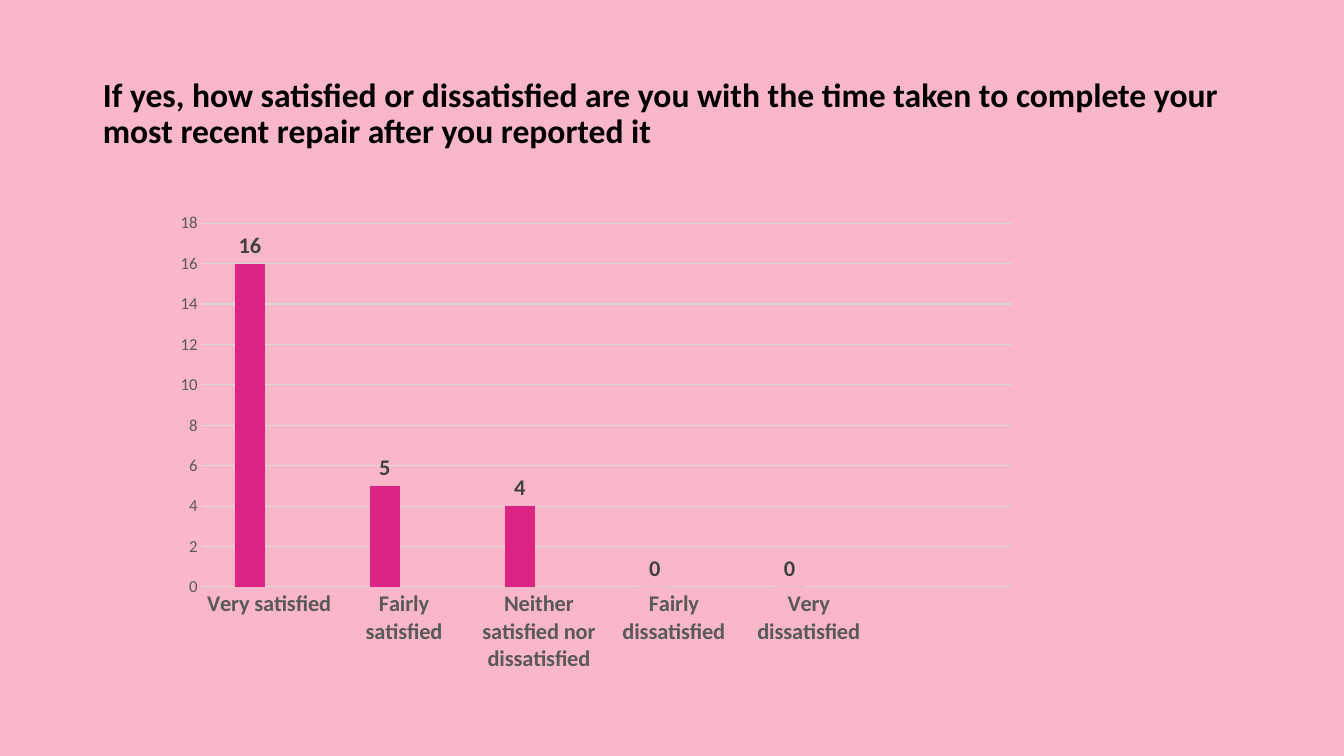
from pptx import Presentation
from pptx.chart.data import CategoryChartData
from pptx.dml.color import RGBColor
from pptx.enum.chart import XL_CHART_TYPE, XL_LABEL_POSITION, XL_TICK_MARK
from pptx.enum.text import MSO_ANCHOR, MSO_AUTO_SIZE, PP_ALIGN
from pptx.util import Inches, Pt

COLUMN_CLUSTERED = XL_CHART_TYPE.COLUMN_CLUSTERED
OUTSIDE_END = XL_LABEL_POSITION.OUTSIDE_END
NO_TICK = XL_TICK_MARK.NONE
BOTTOM = MSO_ANCHOR.BOTTOM
NO_AUTOFIT = MSO_AUTO_SIZE.NONE
LEFT = PP_ALIGN.LEFT

PINK = RGBColor(0xFA, 0xB7, 0xC9)
MAGENTA = RGBColor(0xDC, 0x24, 0x85)
BLACK = RGBColor(0x00, 0x00, 0x00)
DARK_GREY = RGBColor(0x40, 0x40, 0x40)
GREY = RGBColor(0x59, 0x59, 0x59)
LIGHT_GREY = RGBColor(0xD9, 0xD9, 0xD9)
FONT_NAME = "Calibri"
TITLE_ONLY_LAYOUT = 5

QUESTION = (
    "If yes, how satisfied or dissatisfied are you with the time taken "
    "to complete your most recent repair after you reported it"
)
ANSWERS = [
    "Very satisfied",
    "Fairly satisfied",
    "Neither satisfied nor dissatisfied",
    "Fairly dissatisfied",
    "Very dissatisfied",
    "",
]
SERIES = [
    ("Series 1", [16, 5, 4, 0, 0, None], MAGENTA, 16, True),
    ("Series 2", [None] * len(ANSWERS), PINK, 12, False),
]


def set_font(font, size, color, bold=False):
    font.name = FONT_NAME
    font.size = Pt(size)
    font.bold = bold
    font.color.rgb = color


def set_line(line):
    line.color.rgb = LIGHT_GREY
    line.width = Pt(0.75)


def add_question(slide, left, top, width, height):
    title = slide.shapes.title
    title.left, title.top, title.width, title.height = left, top, width, height
    frame = title.text_frame
    frame.text = QUESTION
    frame.word_wrap = True
    frame.auto_size = NO_AUTOFIT
    frame.vertical_anchor = BOTTOM
    paragraph = frame.paragraphs[0]
    paragraph.alignment = LEFT
    paragraph.line_spacing = 0.9
    set_font(paragraph.font, 24, BLACK, True)


def format_axes(chart):
    category_axis = chart.category_axis
    value_axis = chart.value_axis
    for axis in (category_axis, value_axis):
        axis.major_tick_mark = NO_TICK
        axis.minor_tick_mark = NO_TICK
    set_font(category_axis.tick_labels.font, 16, GREY, True)
    set_line(category_axis.format.line)
    set_font(value_axis.tick_labels.font, 12, GREY)
    value_axis.format.line.fill.background()
    value_axis.minimum_scale = 0
    value_axis.maximum_scale = 18
    value_axis.major_unit = 2
    value_axis.has_major_gridlines = True
    set_line(value_axis.major_gridlines.format.line)


def add_answer_chart(slide, left, top, width, height):
    chart_data = CategoryChartData()
    chart_data.categories = ANSWERS
    for name, values, *_ in SERIES:
        chart_data.add_series(name, values)
    chart = slide.shapes.add_chart(
        COLUMN_CLUSTERED, left, top, width, height, chart_data
    ).chart
    chart.has_title = False
    chart.has_legend = False
    set_font(chart.font, 10, BLACK)
    format_axes(chart)

    plot = chart.plots[0]
    plot.vary_by_categories = False
    plot.gap_width = 219
    plot.overlap = -27
    for series, (_, _, color, size, bold) in zip(plot.series, SERIES):
        series.format.fill.solid()
        series.format.fill.fore_color.rgb = color
        series.invert_if_negative = False
        labels = series.data_labels
        labels.show_value = True
        labels.position = OUTSIDE_END
        set_font(labels.font, size, DARK_GREY, bold)


def main():
    presentation = Presentation()
    presentation.slide_width = Inches(13.33)
    presentation.slide_height = Inches(7.5)
    layout = presentation.slide_layouts[TITLE_ONLY_LAYOUT]
    slide = presentation.slides.add_slide(layout)
    slide.background.fill.solid()
    slide.background.fill.fore_color.rgb = PINK
    add_question(slide, Inches(0.92), Inches(0.61), Inches(11.95), Inches(0.94))
    add_answer_chart(slide, Inches(1.62), Inches(2.02), Inches(8.58), Inches(4.75))
    presentation.save("out.pptx")


if __name__ == "__main__":
    main()
